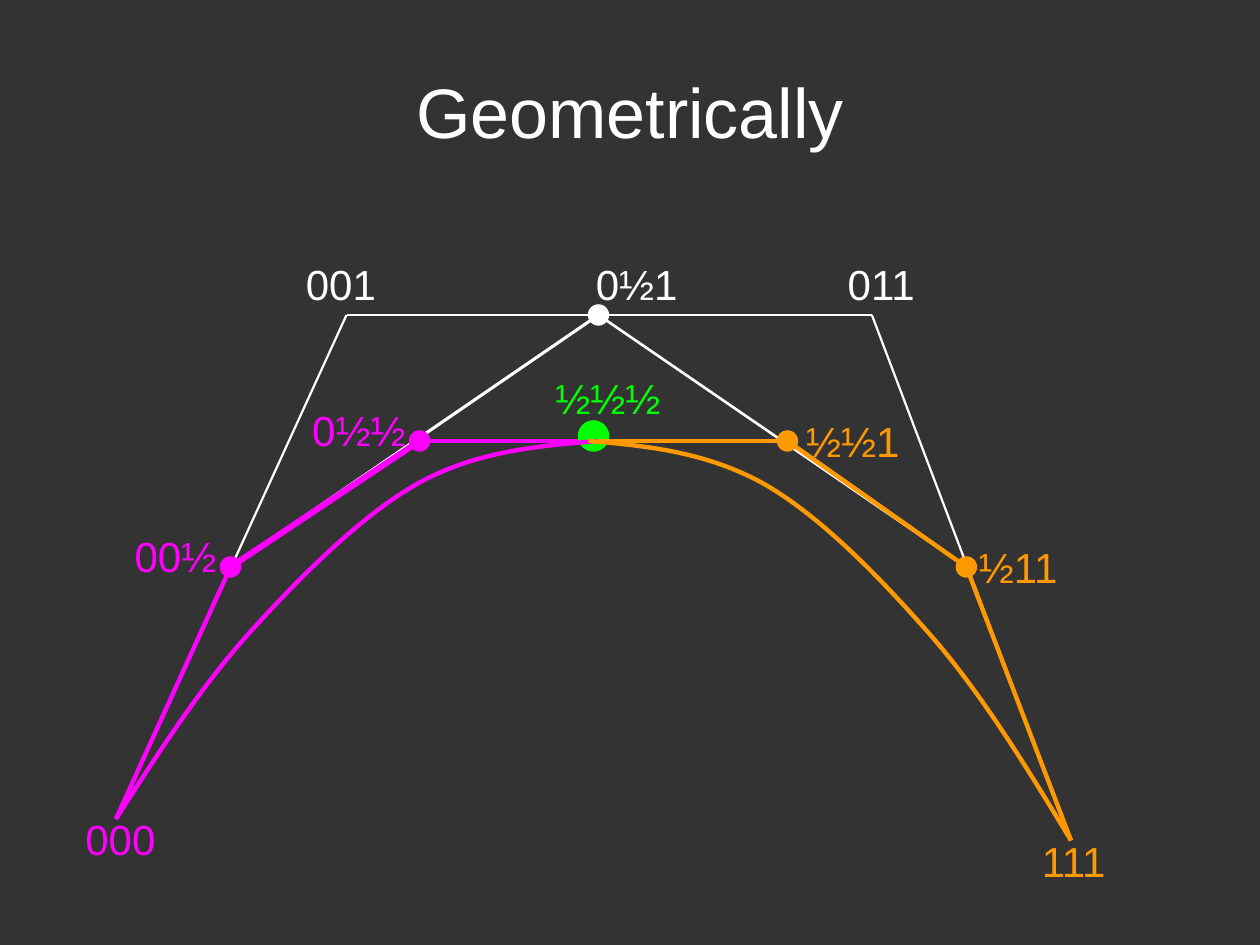
from dataclasses import dataclass

from lxml.etree import SubElement
from pptx import Presentation
from pptx.dml.color import RGBColor
from pptx.enum.shapes import MSO_CONNECTOR, MSO_SHAPE
from pptx.enum.text import MSO_ANCHOR, MSO_AUTO_SIZE, PP_ALIGN
from pptx.oxml.ns import qn
from pptx.slide import Slide
from pptx.text.text import TextFrame
from pptx.util import Inches, Pt

Point = tuple[float, float]


@dataclass(frozen=True)
class Theme:
    background: RGBColor = RGBColor(0x33, 0x33, 0x33)
    control: RGBColor = RGBColor(0xFF, 0xFF, 0xFF)
    left: RGBColor = RGBColor(0xFF, 0x00, 0xFF)
    right: RGBColor = RGBColor(0xFF, 0x99, 0x00)
    middle: RGBColor = RGBColor(0x00, 0xFF, 0x00)
    font: str = "Arial"
    title_size: float = 40
    label_size: float = 24


@dataclass(frozen=True)
class Segment:
    start: Point
    end: Point
    color: RGBColor
    width: float = 2.5


@dataclass(frozen=True)
class Dot:
    center: Point
    color: RGBColor
    diameter: float = 0.17


@dataclass(frozen=True)
class Label:
    text: str
    left: float
    top: float
    width: float
    color: RGBColor
    height: float = 0.5


@dataclass(frozen=True)
class Curve:
    start: Point
    pieces: tuple[tuple[Point, Point, Point], ...]
    color: RGBColor


THEME = Theme()
P000, P001, P011, P111 = (0.92, 6.5), (2.75, 2.5), (6.92, 2.5), (8.5, 6.67)
P00H, P0H1, PH11 = (1.83, 4.5), (4.75, 2.5), (7.67, 4.5)
P0HH, PHH1, APEX = (3.33, 3.5), (6.25, 3.5), (4.75, 3.5)

CONTROL_SEGMENTS = [
    Segment(P0HH, APEX, THEME.left),
    Segment(P000, P001, THEME.control, 1.25),
    Segment(P00H, P0H1, THEME.control, 1.75),
    Segment(P0H1, PH11, THEME.control, 1.5),
    Segment(P001, P011, THEME.control, 1.25),
    Segment(P011, P111, THEME.control, 1.25),
]
DOTS = [
    Dot(P00H, THEME.left),
    Dot(P0H1, THEME.control),
    Dot(P0HH, THEME.left),
    Dot(PHH1, THEME.right),
    Dot(PH11, THEME.right),
    Dot((4.71, 3.46), THEME.middle, 0.25),
]
LABELS = [
    Label("00½", 0.97, 4.16, 0.85, THEME.left),
    Label("0½1", 4.63, 2, 0.85, THEME.control),
    Label("½11", 7.67, 4.25, 0.85, THEME.right),
    Label("0½½", 2.38, 3.16, 0.94, THEME.left),
    Label("½½1", 6.3, 3.25, 0.94, THEME.right),
    Label("½½½", 4.31, 2.91, 1.08, THEME.middle, 0.9),
    Label("000", 0.58, 6.41, 0.76, THEME.left),
    Label("111", 8.17, 6.58, 0.76, THEME.right),
    Label("001", 2.33, 2, 0.76, THEME.control),
    Label("011", 6.63, 2, 0.76, THEME.control),
]
LEFT_SEGMENTS = [
    Segment(P000, P00H, THEME.left),
    Segment(P00H, P0HH, THEME.left, 3.5),
]
CURVES = [
    Curve(P000, (
        ((1.26, 5.97), (1.6, 5.44), (2, 5)),
        ((2.4, 4.56), (2.88, 4.08), (3.33, 3.83)),
        ((3.79, 3.58), (4.27, 3.54), APEX),
    ), THEME.left),
    Curve(P111, (
        ((8.16, 6.11), (7.82, 5.55), (7.42, 5.08)),
        ((7.01, 4.61), (6.54, 4.12), (6.08, 3.85)),
        ((5.62, 3.59), (5.15, 3.54), (4.67, 3.5)),
    ), THEME.right),
]
RIGHT_SEGMENTS = [
    Segment(APEX, PHH1, THEME.right),
    Segment(PHH1, PH11, THEME.right),
    Segment(PH11, P111, THEME.right),
]


def draw_segment(page: Slide, segment: Segment) -> None:
    ends = [Inches(value) for value in segment.start + segment.end]
    connector = page.shapes.add_connector(MSO_CONNECTOR.STRAIGHT, *ends)
    connector.line.color.rgb = segment.color
    connector.line.width = Pt(segment.width)
    SubElement(connector._element.spPr, qn("a:effectLst"))


def draw_dot(page: Slide, dot: Dot) -> None:
    left, top = (Inches(value - dot.diameter / 2) for value in dot.center)
    size = Inches(dot.diameter)
    circle = page.shapes.add_shape(MSO_SHAPE.OVAL, left, top, size, size)
    circle.shadow.inherit = False
    circle.fill.solid()
    circle.fill.fore_color.rgb = dot.color
    circle.line.fill.background()


def draw_label(page: Slide, label: Label,
               size: float = THEME.label_size) -> TextFrame:
    box = page.shapes.add_textbox(Inches(label.left), Inches(label.top),
                                  Inches(label.width), Inches(label.height))
    frame = box.text_frame
    frame.text = label.text
    frame.word_wrap = False
    frame.auto_size = MSO_AUTO_SIZE.SHAPE_TO_FIT_TEXT
    font = frame.paragraphs[0].runs[0].font
    font.name = THEME.font
    font.size = Pt(size)
    font.color.rgb = label.color
    return frame


def draw_title(page: Slide) -> None:
    title = Label("Geometrically", 0.75, 0.42, 8.5, THEME.control, 0.92)
    frame = draw_label(page, title, THEME.title_size)
    frame.word_wrap = True
    frame.auto_size = MSO_AUTO_SIZE.NONE
    frame.vertical_anchor = MSO_ANCHOR.MIDDLE
    frame.paragraphs[0].alignment = PP_ALIGN.CENTER


def to_lengths(point: Point) -> tuple[int, int]:
    return Inches(point[0]), Inches(point[1])


def draw_curve(page: Slide, curve: Curve) -> None:
    builder = page.shapes.build_freeform(*to_lengths(curve.start))
    builder.add_line_segments([to_lengths(piece[-1]) for piece in curve.pieces],
                              close=False)
    shape = builder.convert_to_shape()
    straight_parts = list(shape._element.iter(qn("a:lnTo")))
    for straight, piece in zip(straight_parts, curve.pieces):
        bend = straight.makeelement(qn("a:cubicBezTo"))
        for x, y in map(to_lengths, piece):
            SubElement(bend, qn("a:pt"), x=str(x - shape.left), y=str(y - shape.top))
        straight.getparent().replace(straight, bend)
    shape.shadow.inherit = False
    shape.fill.background()
    shape.line.color.rgb = curve.color
    shape.line.width = Pt(2.5)


def main() -> None:
    deck = Presentation()
    deck.slide_width, deck.slide_height = Inches(10), Inches(7.5)
    page = deck.slides.add_slide(deck.slide_layouts[6])
    page.background.fill.solid()
    page.background.fill.fore_color.rgb = THEME.background
    draw_title(page)
    for draw, items in (
        (draw_segment, CONTROL_SEGMENTS),
        (draw_dot, DOTS),
        (draw_label, LABELS),
        (draw_segment, LEFT_SEGMENTS),
        (draw_curve, CURVES),
        (draw_segment, RIGHT_SEGMENTS),
    ):
        for item in items:
            draw(page, item)
    deck.save("out.pptx")


if __name__ == "__main__":
    main()
